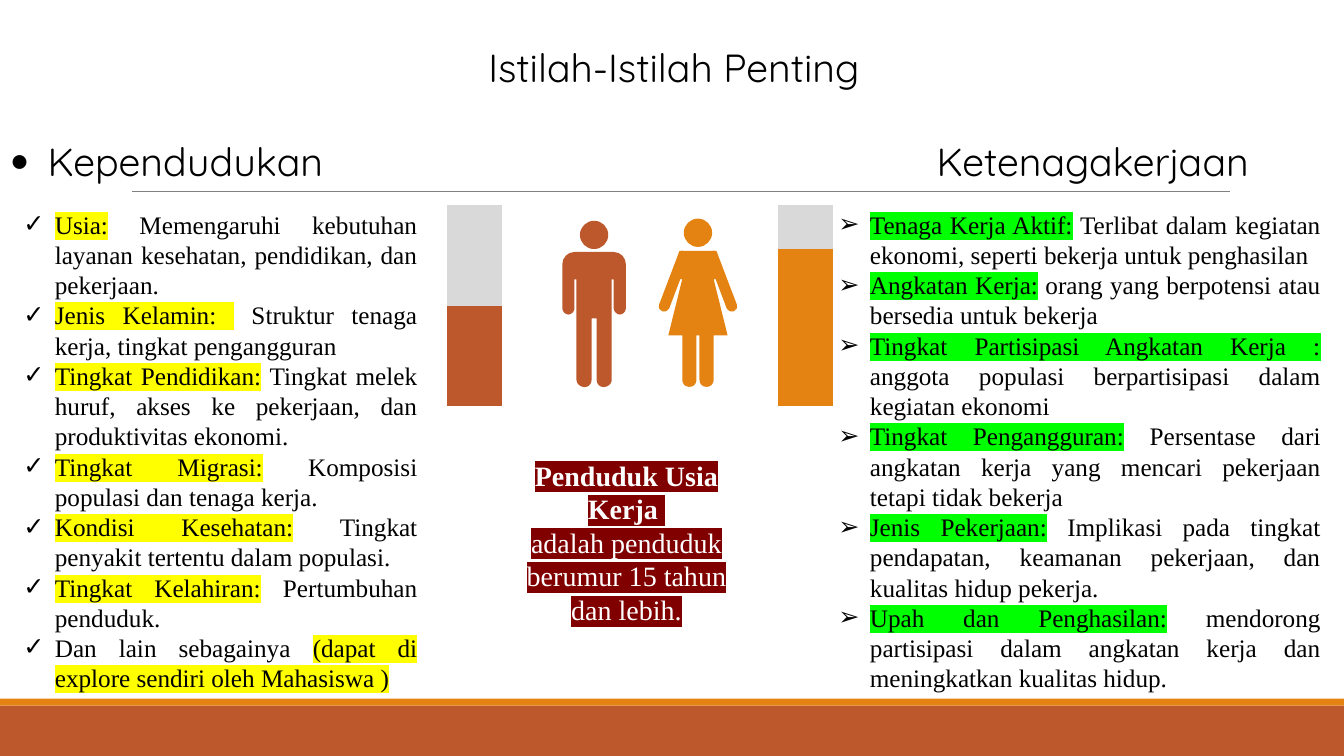
from dataclasses import dataclass

from lxml.etree import SubElement
from pptx import Presentation
from pptx.chart.data import CategoryChartData
from pptx.dml.color import RGBColor
from pptx.enum.chart import XL_CHART_TYPE
from pptx.enum.shapes import MSO_CONNECTOR, MSO_SHAPE
from pptx.enum.text import MSO_ANCHOR, MSO_AUTO_SIZE, PP_ALIGN
from pptx.oxml import parse_xml
from pptx.oxml.ns import nsdecls, qn
from pptx.util import Pt


@dataclass(frozen=True)
class Theme:
    rust: RGBColor = RGBColor(0xBD, 0x58, 0x2C)
    orange: RGBColor = RGBColor(0xE4, 0x83, 0x12)
    teal: RGBColor = RGBColor(0x02, 0x76, 0x96)
    light_grey: RGBColor = RGBColor(0xD9, 0xD9, 0xD9)
    rule_grey: RGBColor = RGBColor(0x80, 0x80, 0x80)
    black: RGBColor = RGBColor(0, 0, 0)
    white: RGBColor = RGBColor(0xFF, 0xFF, 0xFF)
    yellow: RGBColor = RGBColor(0xFF, 0xFF, 0)
    green: RGBColor = RGBColor(0, 0xFF, 0)
    maroon: RGBColor = RGBColor(0x80, 0, 0)
    heading_font: str = "Quicksand"
    body_font: str = "Times New Roman"
    plain_font: str = "Calibri"
    heading_size: int = 28
    caption_size: int = 20
    body_size: int = 18


theme = Theme()


def write(box, place, lines, font, size, align=PP_ALIGN.LEFT, color=theme.black,
          bullet=None, indent=0, highlight=None):
    """Place the box and fill it; text between asterisks is highlighted."""
    box.left, box.top, box.width, box.height = map(Pt, place)
    frame = box.text_frame
    frame.word_wrap = True
    frame.auto_size = MSO_AUTO_SIZE.SHAPE_TO_FIT_TEXT
    for number, line in enumerate(lines):
        paragraph = frame.paragraphs[0] if number == 0 else frame.add_paragraph()
        paragraph.alignment = align
        if bullet:
            properties = paragraph._p.get_or_add_pPr()
            properties.set("marL", str(Pt(indent)))
            properties.set("indent", str(-Pt(indent)))
            SubElement(properties, qn("a:buFont")).set("typeface", theme.plain_font)
            SubElement(properties, qn("a:buChar")).set("char", bullet)
        paragraph.font.name = font
        paragraph.font.size = Pt(size)
        paragraph.font.color.rgb = color
        for position, part in enumerate(line.split("*")):
            if part:
                run = paragraph.add_run()
                run.text = part
                if position % 2:
                    mark = SubElement(run._r.get_or_add_rPr(), qn("a:highlight"))
                    SubElement(mark, qn("a:srgbClr")).set("val", str(highlight))
    return frame


def draw_person(shapes, center, top, right_halves, color):
    """Mirror each right half outline; a step of three points is a Bezier curve."""
    builder, steps = None, []
    for half in right_halves:
        contour = list(half)
        contour.append([(-half[-1][-1][0], half[-1][-1][1])])
        for previous, step in zip(half[-2::-1], half[:0:-1]):
            backward = step[-2::-1] + previous[-1:]
            contour.append([(-x, y) for x, y in backward])
        contour = [[(Pt(center + x), Pt(top + y)) for x, y in step] for step in contour]
        start = contour[0][0]
        if builder is None:
            builder = shapes.build_freeform(*start)
        else:
            builder.move_to(*start)
        builder.add_line_segments([step[-1] for step in contour[1:]], close=True)
        steps += contour[1:]
    person = builder.convert_to_shape()
    for line, step in zip(list(person._element.iter(qn("a:lnTo"))), steps):
        if len(step) == 3:
            curve = parse_xml(f'<a:cubicBezTo {nsdecls("a")}/>')
            for x, y in step:
                point = SubElement(curve, qn("a:pt"))
                point.set("x", str(x - person.left))
                point.set("y", str(y - person.top))
            line.getparent().replace(line, curve)
    person.shadow.inherit = False
    person.fill.solid()
    person.fill.fore_color.rgb = color
    person.line.fill.background()


deck = Presentation()
deck.slide_width, deck.slide_height = Pt(960), Pt(540)
slide = deck.slides.add_slide(deck.slide_layouts[5])
shapes = slide.shapes

# Footer bands and heading rule
for top, height, color in ((504, 36, theme.rust), (499, 5, theme.orange)):
    band = shapes.add_shape(MSO_SHAPE.RECTANGLE, 0, Pt(top), Pt(960), Pt(height))
    band.shadow.inherit = False
    band.fill.solid()
    band.fill.fore_color.rgb = color
    band.line.fill.background()

rule = shapes.add_connector(MSO_CONNECTOR.STRAIGHT, Pt(94.4), Pt(136.6), Pt(878.6), Pt(136.6))
rule.line.color.rgb = theme.rule_grey
rule.line.width = Pt(0.5)
SubElement(rule._element.spPr, qn("a:effectLst"))

# Share columns beside the two people
shares = CategoryChartData()
shares.categories = ["1", "2"]
shares.add_series("Series 1", (50, 78))
shares.add_series("Series 2", (50, 22))
chart = shapes.add_chart(XL_CHART_TYPE.COLUMN_STACKED_100, Pt(214.4), Pt(135.7),
                         Pt(489.6), Pt(165.6), shares).chart
chart.has_legend = False
chart.has_title = False
chart.font.name = theme.plain_font
chart.font.size = Pt(theme.body_size)
chart.font.color.rgb = theme.black
chart.category_axis.visible = False
chart.value_axis.visible = False
chart.value_axis.has_major_gridlines = False
columns = chart.plots[0]
columns.gap_width = 500
columns.overlap = 100
columns.vary_by_categories = False
fills = [series.format.fill for series in columns.series]
fills += [columns.series[0].points[n].format.fill for n in (0, 1)]
for fill, color in zip(fills, (theme.teal, theme.light_grey, theme.rust, theme.orange)):
    fill.solid()
    fill.fore_color.rgb = color
plot_area = chart._chartSpace.chart.plotArea
for automatic in plot_area.findall(qn("c:layout")):
    plot_area.remove(automatic)
plot_area.insert(0, parse_xml(
    f'<c:layout {nsdecls("c")}><c:manualLayout><c:layoutTarget val="inner"/>'
    '<c:xMode val="edge"/><c:yMode val="edge"/><c:x val="0.013"/><c:y val="0.066"/>'
    '<c:w val="0.965"/><c:h val="0.867"/></c:manualLayout></c:layout>'))

head = [[(0, 0)], [(5.6, 0), (10.1, 4.5), (10.1, 10.1)],
        [(10.1, 15.7), (5.6, 20.2), (0, 20.2)]]
man = [[(14, 22.3)], [(19.1, 22.3), (22.7, 26.6), (22.7, 31)], [(22.7, 62.6)],
       [(22.7, 64.8), (20.5, 67), (18.4, 67)], [(16.2, 67), (14, 64.8), (14, 62.6)],
       [(14, 41.8)], [(12.6, 41.8)], [(12.6, 113.8)],
       [(12.6, 116.6), (9.7, 118.8), (6.8, 118.8)],
       [(4, 118.8), (1.8, 116.6), (1.8, 113.8)], [(1.8, 69.8)]]
woman = [[(9, 23)], [(13.3, 23), (13.3, 22.3), (14, 25.2)], [(27.7, 61.2)],
         [(28.4, 63.4), (27.7, 65.5), (25.6, 66.2)],
         [(24.1, 67), (22, 66.2), (20.5, 64.1)],
         [(12.6, 43.2)], [(11.2, 43.2)], [(21.2, 83.5)], [(11.2, 83.5)], [(11.2, 115.2)],
         [(11.2, 118.1), (9, 120.2), (6.1, 120.2)],
         [(3.2, 120.2), (1.1, 118.1), (1.1, 115.2)], [(1.1, 83.5)]]
draw_person(shapes, 424.4, 157.7, (man, head), theme.rust)
draw_person(shapes, 498.6, 156.2, (woman, head), theme.orange)

# Title and column headings
title = write(shapes.title, (51.8, 27.4, 859, 41), ["Istilah-Istilah Penting"],
              theme.heading_font, theme.heading_size, PP_ALIGN.CENTER)
title.vertical_anchor = MSO_ANCHOR.TOP
for place, heading, bullet in (((0, 94.3, 481, 41), "Kependudukan", "•"),
                               ((662, 94.3, 249, 41), "Ketenagakerjaan", None)):
    write(shapes.add_textbox(0, 0, 0, 0), place, [heading], theme.heading_font,
          theme.heading_size, bullet=bullet, indent=27)

# Term lists
population_terms = [
    "*Usia:* Memengaruhi kebutuhan layanan kesehatan, pendidikan, dan pekerjaan.",
    "*Jenis Kelamin: * Struktur tenaga kerja, tingkat pengangguran",
    "*Tingkat Pendidikan:* Tingkat melek huruf, akses ke pekerjaan, dan produktivitas ekonomi.",
    "*Tingkat Migrasi:* Komposisi populasi dan tenaga kerja.",
    "*Kondisi Kesehatan:* Tingkat penyakit tertentu dalam populasi.",
    "*Tingkat Kelahiran:* Pertumbuhan penduduk.",
    "Dan lain sebagainya *(dapat di explore sendiri oleh Mahasiswa )*",
]
labour_terms = [
    "*Tenaga Kerja Aktif:* Terlibat dalam kegiatan ekonomi, seperti bekerja untuk penghasilan",
    "*Angkatan Kerja:* orang yang berpotensi atau bersedia untuk bekerja",
    "*Tingkat Partisipasi Angkatan Kerja : *anggota populasi berpartisipasi dalam kegiatan ekonomi",
    "*Tingkat Pengangguran:* Persentase dari angkatan kerja yang mencari pekerjaan tetapi "
    "tidak bekerja",
    "*Jenis Pekerjaan:* Implikasi pada tingkat pendapatan, keamanan pekerjaan, dan kualitas "
    "hidup pekerja.",
    "*Upah dan Penghasilan:* mendorong partisipasi dalam angkatan kerja dan meningkatkan "
    "kualitas hidup.",
]
for left, width, terms, bullet, highlight in (
        (9.6, 295.6, population_terms, "✓", theme.yellow),
        (591.8, 358.6, labour_terms, "➢", theme.green)):
    write(shapes.add_textbox(0, 0, 0, 0), (left, 145.7, width, 356.4), terms, theme.body_font,
          theme.body_size, PP_ALIGN.JUSTIFY, bullet=bullet, indent=22.5, highlight=highlight)

# Working-age definition
working_age = write(shapes.add_textbox(0, 0, 0, 0), (367.9, 323.7, 159.1, 128.2),
                    ["*Penduduk Usia Kerja *", "*adalah penduduk berumur 15 tahun dan lebih.*"],
                    theme.body_font, theme.caption_size, PP_ALIGN.CENTER, theme.white,
                    highlight=theme.maroon)
working_age.paragraphs[0].font.bold = True

deck.save("out.pptx")
